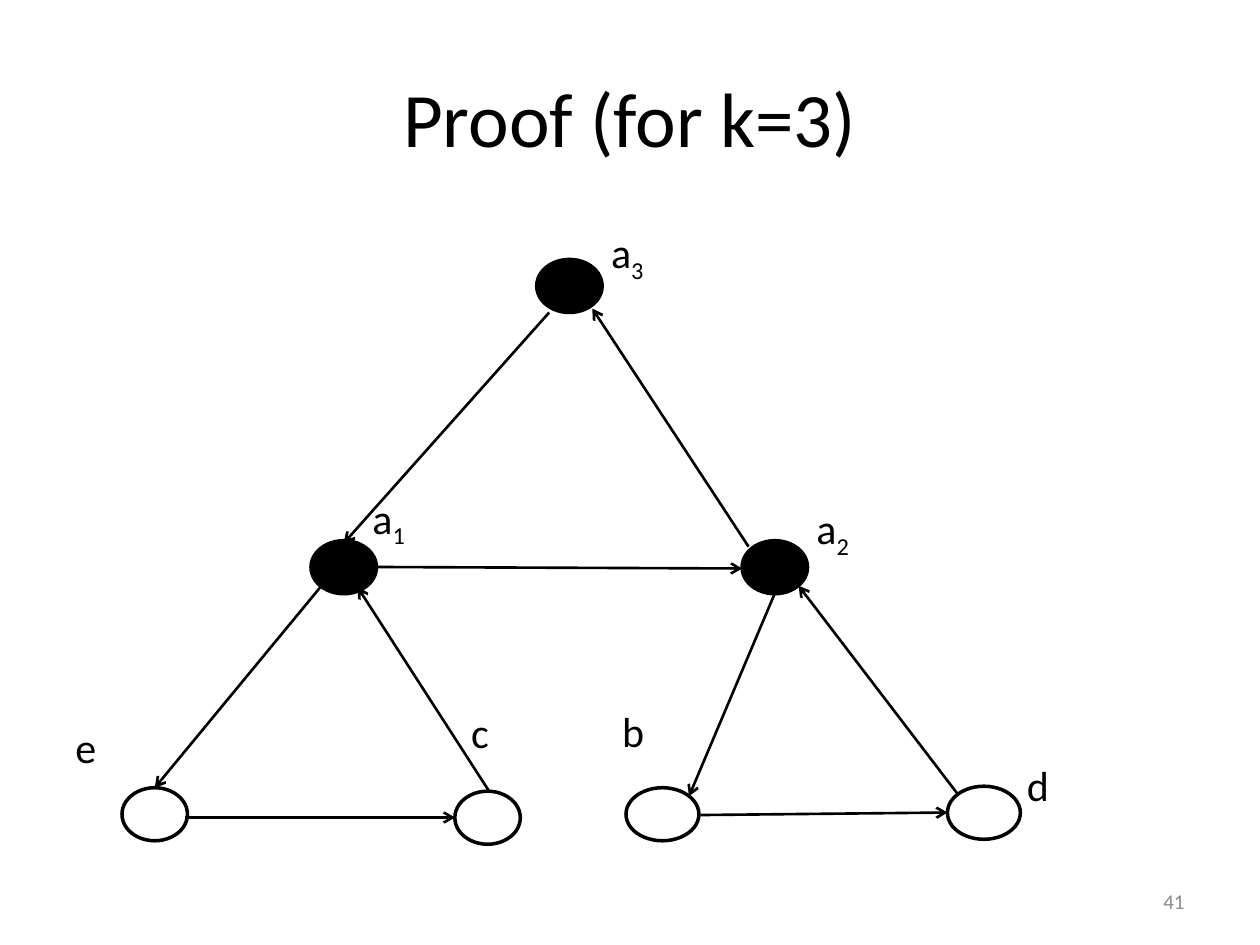
from dataclasses import dataclass

from lxml import etree
from pptx import Presentation
from pptx import util as u
from pptx.dml.color import RGBColor
from pptx.enum import shapes, text
from pptx.oxml.ns import qn

BLACK = "000000"
GREY = "8C8C8C"
NODE_HEIGHT = 1.07
LABEL_HEIGHT = 1.78


@dataclass
class Node:
    name: str
    left: float
    top: float
    label_left: float
    label_top: float
    subscript: str = ""
    width: float = 1.32
    label_width: float = 3.3


@dataclass
class Arrow:
    start: tuple[float, float]
    end: tuple[float, float]


NODES = [
    Node("a", 6.27, 10.9, 7.26, 9.8, "1"),
    Node("a", 14.96, 10.9, 16.21, 10.01, "2"),
    Node("a", 10.82, 5.23, 12.07, 4.45, "3"),
    Node("b", 12.62, 15.88, 12.29, 14.1, width=1.47),
    Node("c", 9.17, 15.95, 9.25, 14.12, label_width=3.68),
    Node("d", 19.1, 15.85, 20.45, 15.19, width=1.47, label_width=3.68),
    Node("e", 2.46, 15.88, 1.27, 14.43),
]

ARROWS = [
    Arrow((7.62, 11.43), (14.96, 11.46)),
    Arrow((15.09, 11.02), (11.94, 6.22)),
    Arrow((11.07, 6.3), (6.93, 10.95)),
    Arrow((14.12, 16.43), (19.1, 16.38)),
    Arrow((19.3, 16), (16.1, 11.81)),
    Arrow((15.62, 11.96), (13.89, 16.05)),
    Arrow((3.73, 16.48), (9.17, 16.48)),
    Arrow((9.86, 15.95), (7.21, 11.84)),
    Arrow((6.48, 11.81), (3.12, 15.88)),
]


def color(value: str) -> RGBColor:
    return RGBColor.from_string(value)


def add_text(slide, content: str, left: float, top: float, width: float, height: float, *,
             size: float = 24, fill: str = BLACK, subscript: str = "",
             align=text.PP_ALIGN.LEFT, anchor=text.MSO_ANCHOR.TOP) -> None:
    shape = slide.shapes.add_textbox(u.Cm(left), u.Cm(top), u.Cm(width), u.Cm(height))
    frame = shape.text_frame
    frame.word_wrap = True
    frame.vertical_anchor = anchor
    paragraph = frame.paragraphs[0]
    paragraph.alignment = align
    for part in filter(None, (content, subscript)):
        run = paragraph.add_run()
        run.text = part
        run.font.name = "Calibri"
        run.font.size = u.Pt(size)
        run.font.color.rgb = color(fill)
    if subscript:
        run._r.get_or_add_rPr().set("baseline", "-25000")


def add_node(slide, node: Node) -> None:
    shape = slide.shapes.add_shape(
        shapes.MSO_SHAPE.OVAL, u.Cm(node.left), u.Cm(node.top), u.Cm(node.width), u.Cm(NODE_HEIGHT))
    shape.shadow.inherit = False
    if node.subscript:
        shape.fill.solid()
        shape.fill.fore_color.rgb = color(BLACK)
    else:
        shape.fill.background()
    shape.line.color.rgb = color(BLACK)
    shape.line.width = u.Pt(2)
    add_text(slide, node.name, node.label_left, node.label_top, node.label_width, LABEL_HEIGHT,
             subscript=node.subscript)


def add_arrow(slide, arrow: Arrow) -> None:
    connector = slide.shapes.add_connector(
        shapes.MSO_CONNECTOR.STRAIGHT, *(u.Cm(value) for value in arrow.start + arrow.end))
    connector.line.color.rgb = color(BLACK)
    connector.line.width = u.Pt(1.5)
    etree.SubElement(connector.line._get_or_add_ln(), qn("a:tailEnd"), type="arrow")
    etree.SubElement(connector._element.spPr, qn("a:effectLst"))


def main() -> None:
    presentation = Presentation()
    presentation.slide_width = u.Cm(25.4)
    presentation.slide_height = u.Cm(19.05)
    slide = presentation.slides.add_slide(presentation.slide_layouts[6])
    add_text(slide, "Proof (for k=3)", 1.27, 0.76, 22.86, 3.18, size=44,
             align=text.PP_ALIGN.CENTER, anchor=text.MSO_ANCHOR.MIDDLE)
    add_text(slide, "41", 18.21, 17.65, 5.92, 1.02, size=12, fill=GREY,
             align=text.PP_ALIGN.RIGHT, anchor=text.MSO_ANCHOR.MIDDLE)
    for node in NODES:
        add_node(slide, node)
    for arrow in ARROWS:
        add_arrow(slide, arrow)
    presentation.save("out.pptx")


if __name__ == "__main__":
    main()
